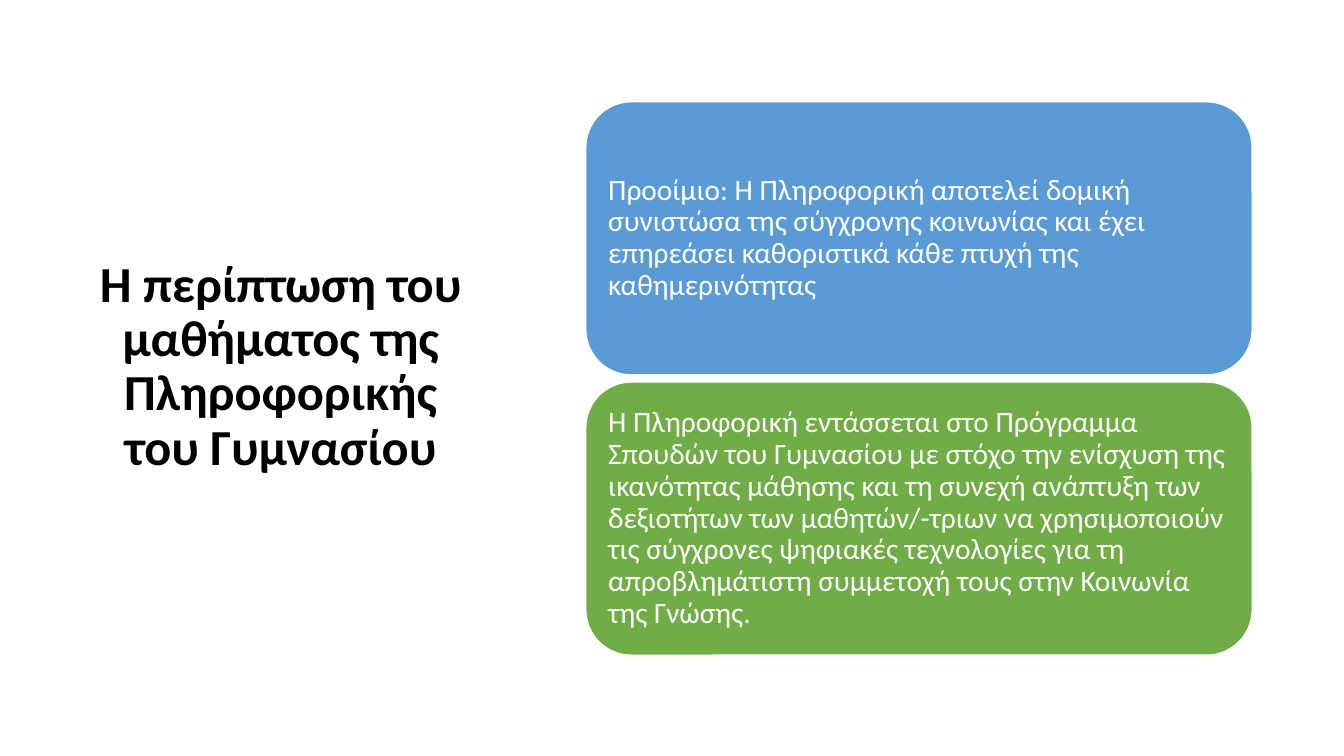
from pptx import Presentation
from pptx.dml.color import RGBColor
from pptx.enum.shapes import MSO_SHAPE
from pptx.enum.text import MSO_ANCHOR, PP_ALIGN
from pptx.util import Inches, Pt

ROUND = MSO_SHAPE.ROUNDED_RECTANGLE
MIDDLE = MSO_ANCHOR.MIDDLE
LEFT, CENTER = PP_ALIGN.LEFT, PP_ALIGN.CENTER

COLORS = {"blue": "5B9BD5", "green": "70AD47", "white": "FFFFFF", "black": "000000"}
FONT = "Calibri"

TITLE = "Η περίπτωση του μαθήματος της Πληροφορικής του Γυμνασίου"
CARDS = [
    ("blue", "Προοίμιο: Η Πληροφορική αποτελεί δομική συνιστώσα της σύγχρονης "
             "κοινωνίας και έχει επηρεάσει καθοριστικά κάθε πτυχή της καθημερινότητας"),
    ("green", "Η Πληροφορική εντάσσεται στο Πρόγραμμα Σπουδών του Γυμνασίου με στόχο "
              "την ενίσχυση της ικανότητας μάθησης και τη συνεχή ανάπτυξη των δεξιοτήτων "
              "των μαθητών/-τριων να χρησιμοποιούν τις σύγχρονες ψηφιακές τεχνολογίες για "
              "τη απροβλημάτιστη συμμετοχή τους στην Κοινωνία της Γνώσης."),
]
CARD_LEFT, CARD_TOP = 5.81, 1.01
CARD_WIDTH, CARD_HEIGHT, CARD_GAP = 6.61, 2.71, 0.07


def color(name):
    return RGBColor.from_string(COLORS[name])


def set_text(shape, text, size, ink, align, bold=False):
    frame = shape.text_frame
    frame.text = text
    frame.word_wrap = True
    frame.vertical_anchor = MIDDLE
    par = frame.paragraphs[0]
    par.alignment = align
    par.line_spacing = 0.9
    font = par.runs[0].font
    font.name, font.size, font.bold = FONT, Pt(size), bold
    font.color.rgb = color(ink)


def add_title(slide):
    box = slide.shapes.add_textbox(Inches(0.71), Inches(1.11), Inches(4.15), Inches(5.07))
    set_text(box, TITLE, 36, "black", CENTER, bold=True)


def add_card(slide, top, fill, text):
    card = slide.shapes.add_shape(ROUND, Inches(CARD_LEFT), Inches(top),
                                  Inches(CARD_WIDTH), Inches(CARD_HEIGHT))
    card.shadow.inherit = False
    card.fill.solid()
    card.fill.fore_color.rgb = color(fill)
    card.line.color.rgb = color("white")
    card.line.width = Pt(1)
    set_text(card, text, 21, "white", LEFT)
    frame = card.text_frame
    frame.margin_left = frame.margin_right = Inches(0.09)
    frame.margin_top = frame.margin_bottom = Inches(0.09)


def main():
    deck = Presentation()
    deck.slide_width, deck.slide_height = Inches(13.33), Inches(7.5)
    slide = deck.slides.add_slide(deck.slide_layouts[6])

    # Title on the left
    add_title(slide)

    # Stacked cards on the right
    for row, (fill, text) in enumerate(CARDS):
        add_card(slide, CARD_TOP + row * (CARD_HEIGHT + CARD_GAP), fill, text)

    deck.save("out.pptx")


if __name__ == "__main__":
    main()
